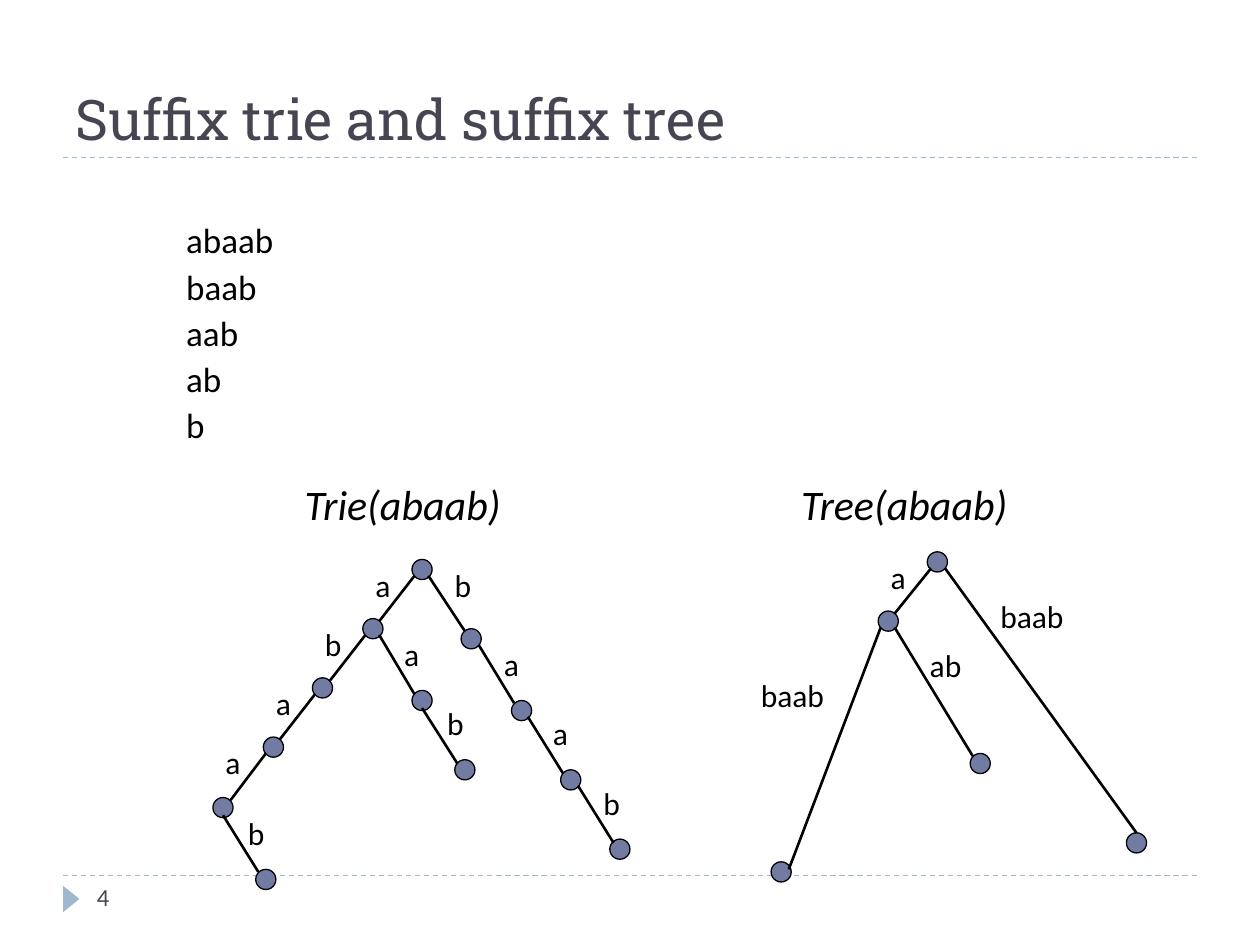
from dataclasses import dataclass
from lxml.etree import SubElement
from pptx import Presentation
from pptx.dml.color import RGBColor as Rgb
from pptx.enum.dml import MSO_LINE as Dash
from pptx.enum.shapes import MSO_CONNECTOR as Conn, MSO_SHAPE as Kind
from pptx.enum.text import MSO_ANCHOR as Anchor, MSO_AUTO_SIZE as Fit
from pptx.oxml.ns import qn
from pptx.util import Pt

PX = 9144
DOT = 16
NEAR, MID, FAR = 2, 8, 14


@dataclass(frozen=True)
class Theme:
    """Colours, fonts and type sizes of the slide."""
    ink: Rgb = Rgb(0, 0, 0)
    head: Rgb = Rgb(0x46, 0x46, 0x53)
    rule: Rgb = Rgb(0x9F, 0xB8, 0xCD)
    dot: Rgb = Rgb(0x72, 0x7C, 0xA3)
    serif: str = "Roboto Slab"
    sans: str = "Calibri"
    title: int = 32
    name: int = 24
    list: int = 20
    label: int = 18
    page: int = 14


LOOK = Theme()

TRIE_DOTS = [(158, 0), (119, 47), (79, 94), (40, 141), (0, 189), (34, 246),
             (158, 104), (192, 159), (197, 55), (237, 112), (276, 167), (315, 222)]
TRIE_EDGES = [
    (0, 1, "a", (119, 0, 32), NEAR, (13, NEAR)),
    (1, 2, "b", (79, 47, 32), NEAR, (FAR, NEAR)),
    (2, 3, "a", (40, 94, 32), NEAR, (13, NEAR)),
    (3, 4, "a", (0, 141, 32), NEAR, (FAR, NEAR)),
    (4, 5, "b", (18, 197, 47), MID, (NEAR, NEAR)),
    (1, 6, "a", (142, 55, 47), 13, (NEAR, 3)),
    (6, 7, "b", (176, 110, 47), MID, (NEAR, 3)),
    (0, 8, "b", (182, 0, 32), 13, (3, NEAR)),
    (8, 9, "a", (221, 63, 47), FAR, (NEAR, NEAR)),
    (9, 10, "a", (260, 118, 47), 13, (NEAR, 3)),
    (10, 11, "b", (300, 173, 47), FAR, (3, 3)),
]
TREE_DOTS = [(142, 0), (103, 47), (18, 246), (176, 160), (300, 223)]
TREE_EDGES = [
    (0, 1, "a", (103, 0, 32), 3, (13, NEAR)),
    (1, 2, "baab", (0, 94, 126), NEAR, (FAR, 6)),
    (1, 3, "ab", (134, 70, 71), 13, (NEAR, NEAR)),
    (0, 4, "baab", (190, 31, 165), FAR, (MID, 0)),
]


def text(page, box, lines, size, color=LOOK.ink, face=LOOK.sans,
         slant=False, anchor=Anchor.TOP, fit=Fit.SHAPE_TO_FIT_TEXT, lead=None, gap=None):
    """Add a text box with one paragraph for each line."""
    frame = page.shapes.add_textbox(*(v * PX for v in box)).text_frame
    frame.word_wrap = True
    frame.auto_size = fit
    frame.vertical_anchor = anchor
    for i, line in enumerate(lines):
        para = frame.add_paragraph() if i else frame.paragraphs[0]
        if lead:
            para.line_spacing = lead
            para.space_before = Pt(gap)
        run = para.add_run()
        run.text = line
        font = run.font
        font.name, font.size, font.italic = face, Pt(size), slant
        font.color.rgb = color


def shape(page, kind, box, fill):
    """Add a flat filled shape without an outline."""
    item = page.shapes.add_shape(kind, *(v * PX for v in box))
    item.shadow.inherit = False
    item.fill.solid()
    item.fill.fore_color.rgb = fill
    item.line.fill.background()
    return item


def line(page, start, end, color, width, dash=None):
    """Add a straight line without a shadow."""
    item = page.shapes.add_connector(Conn.STRAIGHT, *(v * PX for v in (*start, *end)))
    item.line.color.rgb = color
    item.line.width = Pt(width)
    if dash:
        item.line.dash_style = dash
    SubElement(item.element.spPr, qn("a:effectLst"))


def header(page, box):
    """Place the title above its dashed rule."""
    x, y, w, h = box
    line(page, (x, y + h), (x + w, y + h), LOOK.rule, 0.75, Dash.DASH)
    text(page, box, ["Suffix trie and suffix tree"], LOOK.title, LOOK.head,
         LOOK.serif, anchor=Anchor.BOTTOM, fit=Fit.NONE)


def footer(page, box):
    """Place the dashed rule, the marker and the page number."""
    x, y, w, h = box
    line(page, (x, y), (x + w, y), LOOK.rule, 0.75, Dash.DASH)
    mark = shape(page, Kind.ISOSCELES_TRIANGLE, (x - 4, y + 12, 21, 13), LOOK.rule)
    mark.rotation = 90
    text(page, (x + 17, y, 217, h), ["4"], LOOK.page, LOOK.head, fit=Fit.NONE)


def graph(page, spot, dots, edges):
    """Draw dots and labelled edges relative to the given corner."""
    x, y = spot
    for dx, dy in dots:
        dot = shape(page, Kind.OVAL, (x + dx, y + dy, DOT, DOT), LOOK.dot)
        dot.line.color.rgb = LOOK.ink
        dot.line.width = Pt(0.75)
    for top, low, word, (lx, ly, w), out, (ex, ey) in edges:
        (ax, ay), (bx, by) = dots[top], dots[low]
        drop = FAR if out == MID else 13
        line(page, (x + ax + out, y + ay + drop), (x + bx + ex, y + by + ey),
             LOOK.ink, 1.5)
        text(page, (x + lx, y + ly, w, 40), [word], LOOK.label)


def main():
    """Build the slide and save it."""
    deck = Presentation()
    deck.slide_width, deck.slide_height = 1000 * PX, 750 * PX
    page = deck.slides.add_slide(deck.slide_layouts[6])
    header(page, (50, 25, 900, 100))
    footer(page, (50, 695, 900, 40))
    graph(page, (169, 444), TRIE_DOTS, TRIE_EDGES)
    graph(page, (594, 438), TREE_DOTS, TREE_EDGES)
    word = "abaab"
    text(page, (138, 178, 307, 193), [word[i:] for i in range(len(word))],
         LOOK.list, lead=0.7, gap=9.6)
    for x, name in ((232, "Trie"), (626, "Tree")):
        text(page, (x, 375, 252, 50), [f"{name}({word})"], LOOK.name, slant=True)
    deck.save("out.pptx")


if __name__ == "__main__":
    main()
